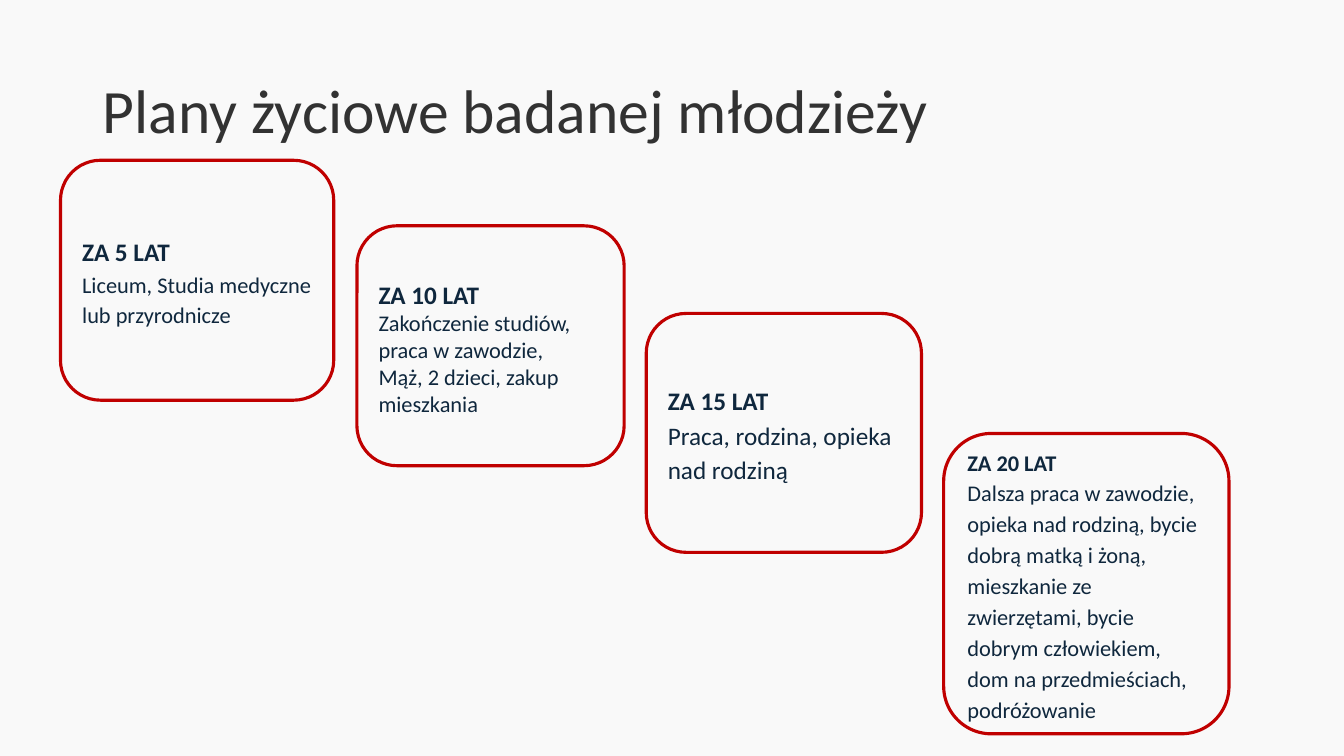
from pptx import Presentation
from pptx.dml.color import RGBColor
from pptx.enum.shapes import MSO_SHAPE as Shape
from pptx.enum.text import MSO_ANCHOR as Anchor, PP_ALIGN as Align
from pptx.util import Inches, Pt

PAPER = RGBColor(0xF9, 0xF9, 0xF9)
TITLE_INK = RGBColor(0x32, 0x32, 0x32)
NAVY = RGBColor(0x0F, 0x27, 0x3D)
RED = RGBColor(0xC0, 0x00, 0x00)
FONT = "Calibri"

PLANS = [
    ((0.6, 1.59, 2.71, 2.38), "ZA 5 LAT", 18,
     ["Liceum, Studia medyczne lub przyrodnicze"], 16, 1.15),
    ((3.54, 2.24, 2.65, 2.38), "ZA 10 LAT", 18,
     ["Zakończenie studiów, praca w zawodzie,",
      "Mąż, 2 dzieci, zakup mieszkania"], 16, 1.0),
    ((6.41, 3.11, 2.73, 2.37), "ZA 15 LAT", 18,
     ["Praca, rodzina, opieka nad rodziną"], 18, 1.15),
    ((9.36, 4.3, 2.83, 2.98), "ZA 20 LAT", 16,
     ["Dalsza praca w zawodzie, opieka nad rodziną, bycie dobrą matką i żoną, "
      "mieszkanie ze zwierzętami, bycie dobrym człowiekiem, "
      "dom na przedmieściach, podróżowanie"], 16, 1.15),
]


def write(paragraph, text, size, color, spacing, bold=False):
    paragraph.alignment = Align.LEFT
    paragraph.line_spacing = spacing
    run = paragraph.add_run()
    run.text = text
    run.font.name = FONT
    run.font.size = Pt(size)
    run.font.bold = bold
    run.font.color.rgb = color


def add_title(slide, box, text):
    title = slide.shapes.add_textbox(*map(Inches, box)).text_frame
    title.word_wrap = True
    title.vertical_anchor = Anchor.MIDDLE
    write(title.paragraphs[0], text, 44, TITLE_INK, 0.9)


def add_plan(slide, box, heading, heading_size, goals, goal_size, goal_spacing):
    card = slide.shapes.add_shape(Shape.ROUNDED_RECTANGLE, *map(Inches, box))
    card.shadow.inherit = False
    card.fill.solid()
    card.fill.fore_color.rgb = PAPER
    card.line.color.rgb = RED
    card.line.width = Pt(2.25)
    plan = card.text_frame
    plan.word_wrap = True
    plan.vertical_anchor = Anchor.MIDDLE
    write(plan.paragraphs[0], heading, heading_size, NAVY, 1.15, bold=True)
    for goal in goals:
        write(plan.add_paragraph(), goal, goal_size, NAVY, goal_spacing)


def main():
    deck = Presentation()
    deck.slide_width, deck.slide_height = Inches(13.33), Inches(7.5)
    slide = deck.slides.add_slide(deck.slide_layouts[6])
    slide.background.fill.solid()
    slide.background.fill.fore_color.rgb = PAPER
    add_title(slide, (0.92, 0.4, 11.5, 1.45), "Plany życiowe badanej młodzieży")
    for plan in PLANS:
        add_plan(slide, *plan)
    deck.save("out.pptx")


if __name__ == "__main__":
    main()
